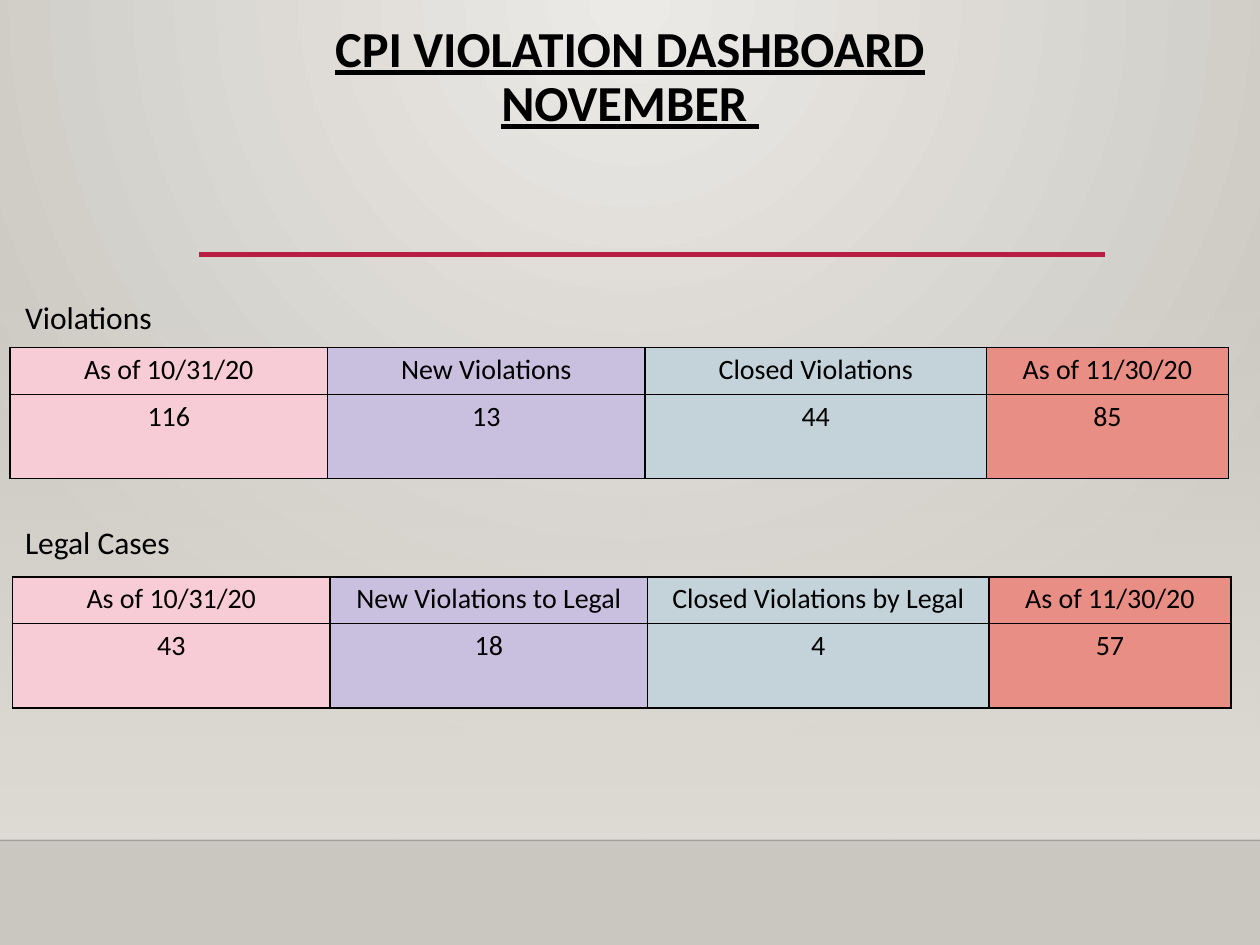
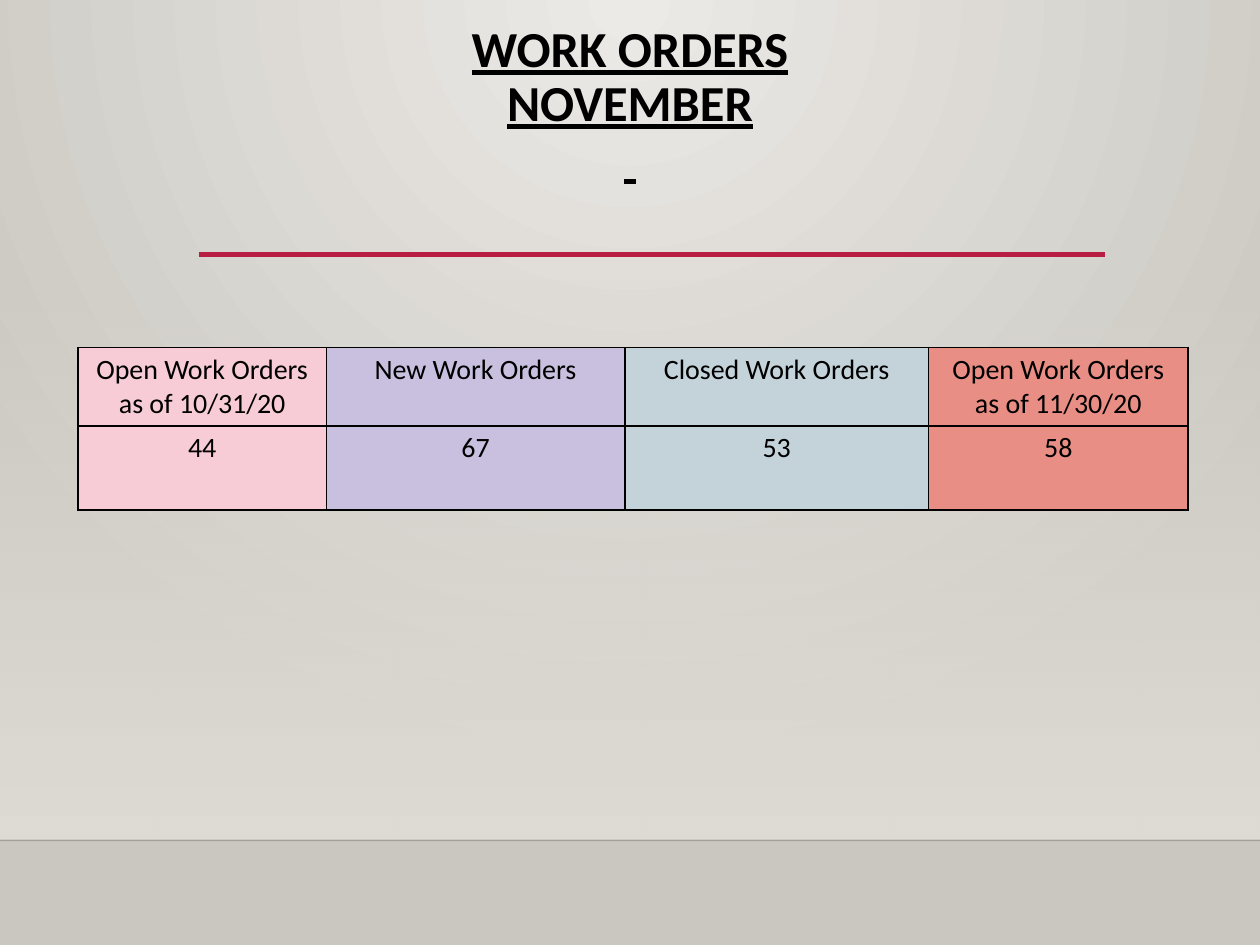
from lxml.etree import SubElement
from pptx import Presentation
from pptx.dml.color import RGBColor
from pptx.enum.shapes import MSO_CONNECTOR, MSO_SHAPE
from pptx.enum.text import MSO_ANCHOR, MSO_AUTO_SIZE, PP_ALIGN
from pptx.oxml.ns import qn
from pptx.util import Inches, Pt

FONT = "Calibri"
BLACK = "000000"
ACCENT = "B71E42"
GLOW, EDGE, HAZE, FLOOR = "ECEAE7", "CAC7C1", "DFDBD5", "000001"
COLUMN_FILLS = ["F7CCD6", "C9BFDF", "C3D3D9", "E88E84"]
SLIDE_W, SLIDE_H = 10, 7.5
FLOOR_Y = 6.67


def rgb(value):
    return RGBColor.from_string(value)


def sub(parent, tag, **attrs):
    return SubElement(parent, qn(tag), attrs)


def set_alpha(color_element, percent):
    sub(color_element, "a:alpha", val=str(percent * 1000))


def set_stops(fill, *colors):
    fill.gradient()
    for stop, position, color in zip(fill.gradient_stops, (0, 1), colors):
        stop.position = position
        stop.color.rgb = rgb(color)


def write(tf, text, size=18, bold=False, underline=False,
          align=PP_ALIGN.LEFT, spacing=None):
    tf.word_wrap = True
    p = tf.paragraphs[0]
    p.text = text.replace("\n", "\v")
    p.alignment = align
    if spacing:
        p.line_spacing = spacing
    for r in p.runs:
        r.font.name = FONT
        r.font.size = Pt(size)
        r.font.bold = bold
        r.font.underline = underline
        r.font.color.rgb = rgb(BLACK)


def add_text(s, text, left, top, width, height, grow=False, **style):
    box = s.shapes.add_textbox(*map(Inches, (left, top, width, height)))
    tf = box.text_frame
    write(tf, text, **style)
    tf.vertical_anchor = MSO_ANCHOR.TOP
    if grow:
        tf.auto_size = MSO_AUTO_SIZE.SHAPE_TO_FIT_TEXT


def add_rule(s, left, right, y, color, width, alpha=None):
    line = s.shapes.add_connector(
        MSO_CONNECTOR.STRAIGHT, *map(Inches, (left, y, right, y)))
    line.line.color.rgb = rgb(color)
    line.line.width = Pt(width)
    sp_pr = line._element.spPr
    if alpha is not None:
        set_alpha(sp_pr.find(".//" + qn("a:srgbClr")), alpha)
    sub(sp_pr, "a:effectLst")


def set_background(master):
    set_stops(master.background.fill, GLOW, EDGE)
    grad = master.element.find(".//" + qn("p:bgPr") + "/" + qn("a:gradFill"))
    grad.remove(grad.find(qn("a:lin")))
    path = sub(grad, "a:path", path="circle")
    sub(path, "a:fillToRect", l="43000", t="0", r="43000", b="100000")


def add_base(prs, title):
    s = prs.slides.add_slide(prs.slide_layouts[6])
    haze = s.shapes.add_shape(
        MSO_SHAPE.RECTANGLE, 0, Inches(2.2), Inches(SLIDE_W), Inches(4.46))
    haze.shadow.inherit = False
    haze.line.fill.background()
    set_stops(haze.fill, HAZE, HAZE)
    haze.fill.gradient_angle = 270
    set_alpha(haze._element.spPr.find(".//" + qn("a:srgbClr")), 0)
    add_rule(s, 0, SLIDE_W, FLOOR_Y, FLOOR, 1, alpha=20)
    add_rule(s, 1.58, 8.77, 2.02, ACCENT, 2.5)
    add_text(s, title, 0.69, 0.14, 8.62, 0.6, size=28.8, bold=True,
             underline=True, align=PP_ALIGN.CENTER, spacing=0.9)
    return s


def add_borders(cell):
    tc_pr = cell._tc.get_or_add_tcPr()
    for side in ("a:lnL", "a:lnR", "a:lnT", "a:lnB"):
        ln = sub(tc_pr, side, w=str(Pt(1)))
        sub(sub(ln, "a:solidFill"), "a:srgbClr", val=BLACK)


def add_counts(s, left, top, widths, headers, counts, header_height=0.37):
    heights = [header_height, 0.67]
    table = s.shapes.add_table(
        2, len(widths), Inches(left), Inches(top),
        Inches(sum(widths)), Inches(sum(heights))).table
    table.first_row = table.horz_banding = False
    for column, width in zip(table.columns, widths):
        column.width = Inches(width)
    for i, (height, values) in enumerate(zip(heights, (headers, counts))):
        table.rows[i].height = Inches(height)
        for j, (value, color) in enumerate(zip(values, COLUMN_FILLS)):
            cell = table.cell(i, j)
            cell.margin_left = cell.margin_right = Inches(0.07)
            cell.margin_top = cell.margin_bottom = Inches(0.04)
            add_borders(cell)
            cell.fill.solid()
            cell.fill.fore_color.rgb = rgb(color)
            write(cell.text_frame, str(value), size=16, align=PP_ALIGN.CENTER)


def add_violations_slide(prs):
    s = add_base(prs, "CPI VIOLATION DASHBOARD\nNOVEMBER ")
    start, end = "As of 10/31/20", "As of 11/30/20"
    sections = [
        ("Violations", 2.32, 0.08, 2.76,
         ["New Violations", "Closed Violations"], [116, 13, 44, 85]),
        ("Legal Cases", 4.1, 0.1, 4.58,
         ["New Violations to Legal", "Closed Violations by Legal"],
         [43, 18, 4, 57]),
    ]
    for label, label_top, left, top, changes, counts in sections:
        add_counts(s, left, top, [2.52, 2.52, 2.71, 1.92],
                   [start, *changes, end], counts)
        add_text(s, label, 0.1, label_top, 3.59, 0.4, grow=True)


def add_work_orders_slide(prs):
    s = add_base(prs, "WORK ORDERS\nNOVEMBER\n ")
    headers = ["Open Work Orders as of 10/31/20", "New Work Orders",
               "Closed Work Orders", "Open Work Orders as of 11/30/20"]
    add_counts(s, 0.62, 2.76, [1.97, 2.37, 2.41, 2.06], headers,
               [44, 67, 53, 58], header_height=0.62)


def main():
    prs = Presentation()
    prs.slide_width, prs.slide_height = Inches(SLIDE_W), Inches(SLIDE_H)
    set_background(prs.slide_master)
    add_violations_slide(prs)
    add_work_orders_slide(prs)
    prs.save("out.pptx")


if __name__ == "__main__":
    main()
